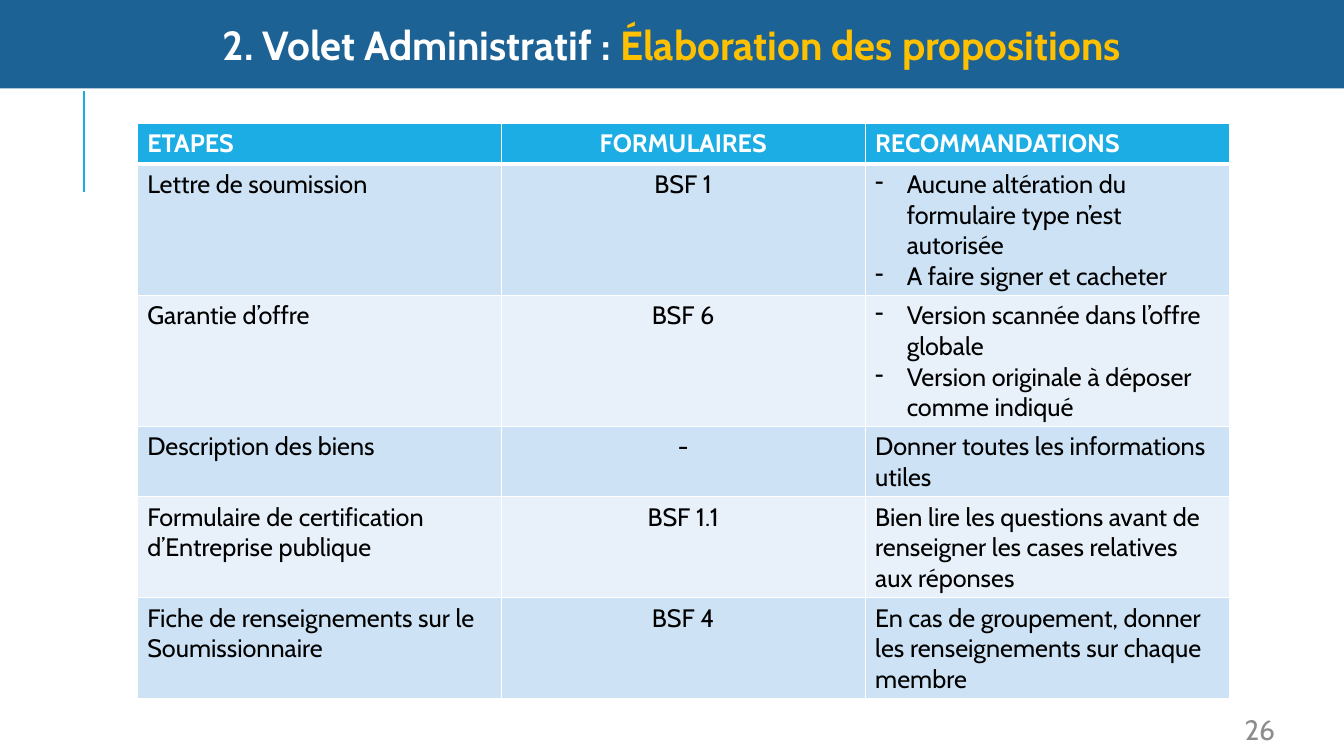
"""Build the slide on the forms required for preparing administrative proposals."""
from lxml import etree
from pptx import Presentation
from pptx.dml.color import RGBColor
from pptx.enum.shapes import MSO_CONNECTOR
from pptx.enum.text import MSO_ANCHOR, MSO_AUTO_SIZE, PP_ALIGN
from pptx.oxml.ns import qn
from pptx.util import Pt

TITLE_RUNS = ["2. Volet Administratif : ", "Élaboration des propositions"]
PAGE_NUMBER = "26"
HEADERS = ["ETAPES", "FORMULAIRES", "RECOMMANDATIONS"]
STEPS = [
    ("Lettre de soumission", "BSF 1",
     ["Aucune altération du formulaire type n’est autorisée", "A faire signer et cacheter"]),
    ("Garantie d’offre", "BSF 6",
     ["Version scannée dans l’offre globale", "Version originale à déposer comme indiqué"]),
    ("Description des biens", "-", "Donner toutes les informations utiles"),
    ("Formulaire de certification d’Entreprise publique", "BSF 1.1",
     "Bien lire les questions avant de renseigner les cases relatives aux réponses"),
    ("Fiche de renseignements sur le Soumissionnaire", "BSF 4",
     "En cas de groupement, donner les renseignements sur chaque membre"),
]

FONT = "Cabin"
WHITE = RGBColor(0xFF, 0xFF, 0xFF)
BLACK = RGBColor(0x00, 0x00, 0x00)
GOLD = RGBColor(0xFF, 0xC0, 0x00)
GREY = RGBColor(0x8C, 0x8C, 0x8C)
BANNER_BLUE = RGBColor(0x1D, 0x62, 0x94)
ACCENT_BLUE = RGBColor(0x1C, 0xAD, 0xE4)
BANDS = [RGBColor(0xCD, 0xE3, 0xF5), RGBColor(0xE8, 0xF1, 0xFA)]

LEFT, CENTER, RIGHT = PP_ALIGN.LEFT, PP_ALIGN.CENTER, PP_ALIGN.RIGHT
COLUMN_ALIGNMENTS = [LEFT, CENTER, LEFT]
SLIDE_WIDTH, SLIDE_HEIGHT = 960, 540
TABLE_LEFT, TABLE_TOP = 98, 88
COLUMN_WIDTH, ROW_HEIGHT = 260, 29.2
BULLET_INDENT = 22.5
TITLE_ONLY_LAYOUT = 5


def add_text(paragraph, text, size=18, color=BLACK, bold=False, align=LEFT):
    """Append a formatted run to a paragraph."""
    paragraph.alignment = align
    run = paragraph.add_run()
    run.text = text
    run.font.name = FONT
    run.font.size = Pt(size)
    run.font.bold = bold
    run.font.color.rgb = color


def set_margins(frame, horizontal, vertical):
    """Set the inner margins of a text frame."""
    frame.margin_left = frame.margin_right = Pt(horizontal)
    frame.margin_top = frame.margin_bottom = Pt(vertical)


def add_dash_bullet(paragraph):
    """Give a paragraph a hanging dash bullet."""
    properties = paragraph._p.get_or_add_pPr()
    properties.set("marL", str(Pt(BULLET_INDENT)))
    properties.set("indent", str(-Pt(BULLET_INDENT)))
    etree.SubElement(properties, qn("a:buChar"), char="-")


def set_borders(cell, bottom_width):
    """Draw white borders around a cell."""
    properties = cell._tc.get_or_add_tcPr()
    widths = {"a:lnL": 1, "a:lnR": 1, "a:lnT": 1, "a:lnB": bottom_width}
    for position, (tag, width) in enumerate(widths.items()):
        line = etree.Element(qn(tag), w=str(Pt(width)))
        fill = etree.SubElement(line, qn("a:solidFill"))
        etree.SubElement(fill, qn("a:srgbClr"), val=str(WHITE))
        properties.insert(position, line)


def add_title(slide):
    """Turn the title placeholder into the banner."""
    title = slide.shapes.title
    title.left, title.top = Pt(0), Pt(0)
    title.width, title.height = Pt(SLIDE_WIDTH), Pt(63.2)
    title.fill.solid()
    title.fill.fore_color.rgb = BANNER_BLUE
    frame = title.text_frame
    frame.auto_size = MSO_AUTO_SIZE.NONE
    frame.vertical_anchor = MSO_ANCHOR.MIDDLE
    set_margins(frame, 8, 4)
    for text, color in zip(TITLE_RUNS, [WHITE, GOLD]):
        add_text(frame.paragraphs[0], text, size=29, color=color, bold=True, align=CENTER)


def add_accent_line(slide):
    """Draw the vertical line below the banner."""
    line = slide.shapes.add_connector(MSO_CONNECTOR.STRAIGHT, Pt(60), Pt(137), Pt(60), Pt(65))
    line.line.color.rgb = ACCENT_BLUE
    line.line.width = Pt(1.5)
    etree.SubElement(line._element.spPr, qn("a:effectLst"))


def add_page_number(slide):
    """Place the page number at the bottom right."""
    box = slide.shapes.add_textbox(Pt(878.4), Pt(509), Pt(32.4), Pt(24.5))
    frame = box.text_frame
    frame.word_wrap = True
    set_margins(frame, 0, 0)
    add_text(frame.paragraphs[0], PAGE_NUMBER, size=20, color=GREY, align=RIGHT)


def add_steps_table(slide):
    """Add the table of steps, forms and recommendations."""
    rows = [HEADERS, *STEPS]
    table = slide.shapes.add_table(
        len(rows), len(HEADERS), Pt(TABLE_LEFT), Pt(TABLE_TOP),
        Pt(COLUMN_WIDTH * len(HEADERS)), Pt(ROW_HEIGHT * len(rows))).table
    for column in table.columns:
        column.width = Pt(COLUMN_WIDTH)
    for row_index, row in enumerate(rows):
        table.rows[row_index].height = Pt(ROW_HEIGHT)
        is_header = row_index == 0
        for column_index, content in enumerate(row):
            cell = table.cell(row_index, column_index)
            cell.fill.solid()
            cell.fill.fore_color.rgb = ACCENT_BLUE if is_header else BANDS[(row_index - 1) % 2]
            set_borders(cell, 3 if is_header else 1)
            bulleted = isinstance(content, list)
            frame = cell.text_frame
            for index, text in enumerate(content if bulleted else [content]):
                paragraph = frame.add_paragraph() if index else frame.paragraphs[0]
                add_text(paragraph, text, color=WHITE if is_header else BLACK,
                         bold=is_header, align=COLUMN_ALIGNMENTS[column_index])
                if bulleted:
                    add_dash_bullet(paragraph)


def main():
    """Assemble and save the presentation."""
    presentation = Presentation()
    presentation.slide_width, presentation.slide_height = Pt(SLIDE_WIDTH), Pt(SLIDE_HEIGHT)
    slide = presentation.slides.add_slide(presentation.slide_layouts[TITLE_ONLY_LAYOUT])
    add_accent_line(slide)
    add_title(slide)
    add_page_number(slide)
    add_steps_table(slide)
    presentation.save("out.pptx")


if __name__ == "__main__":
    main()
